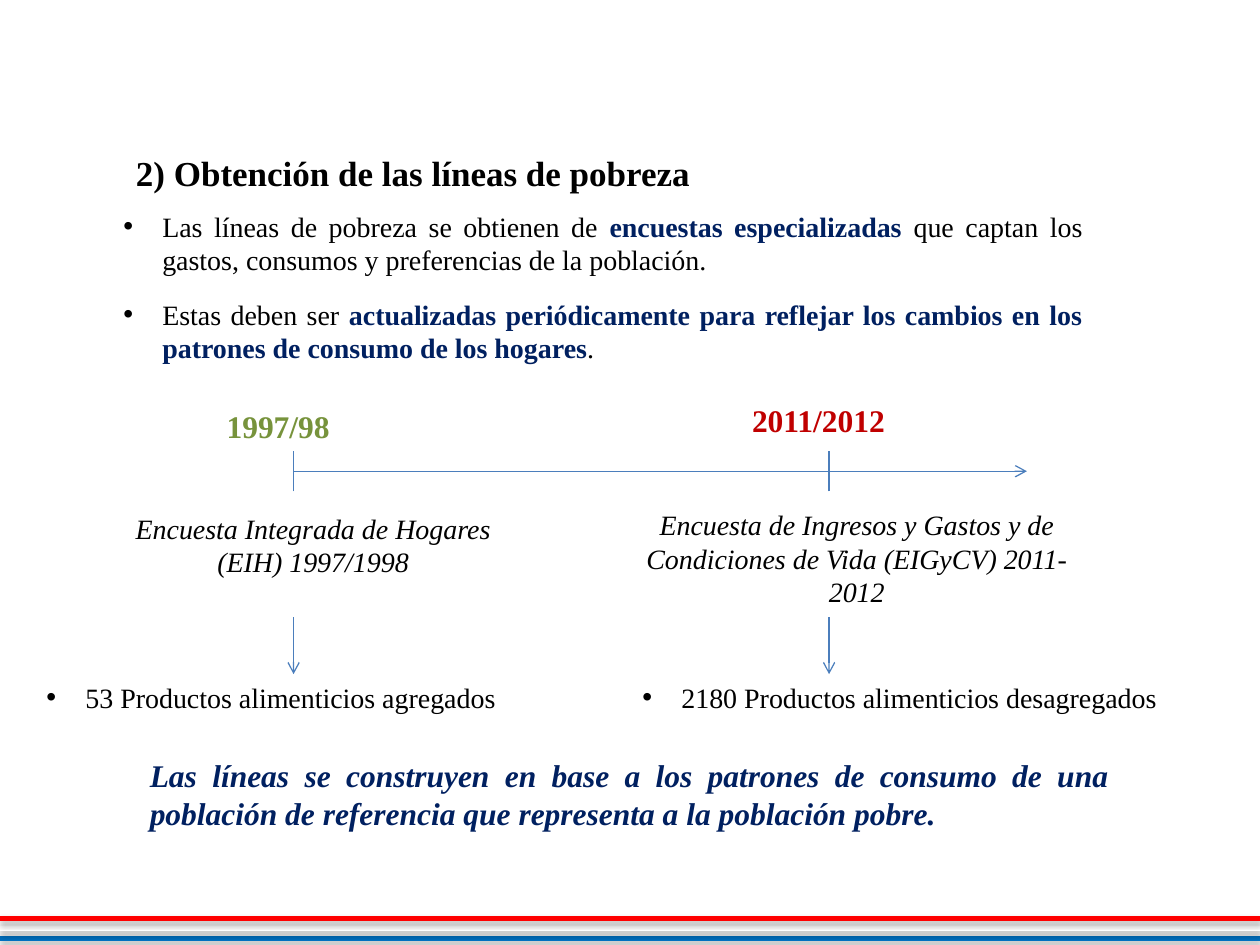
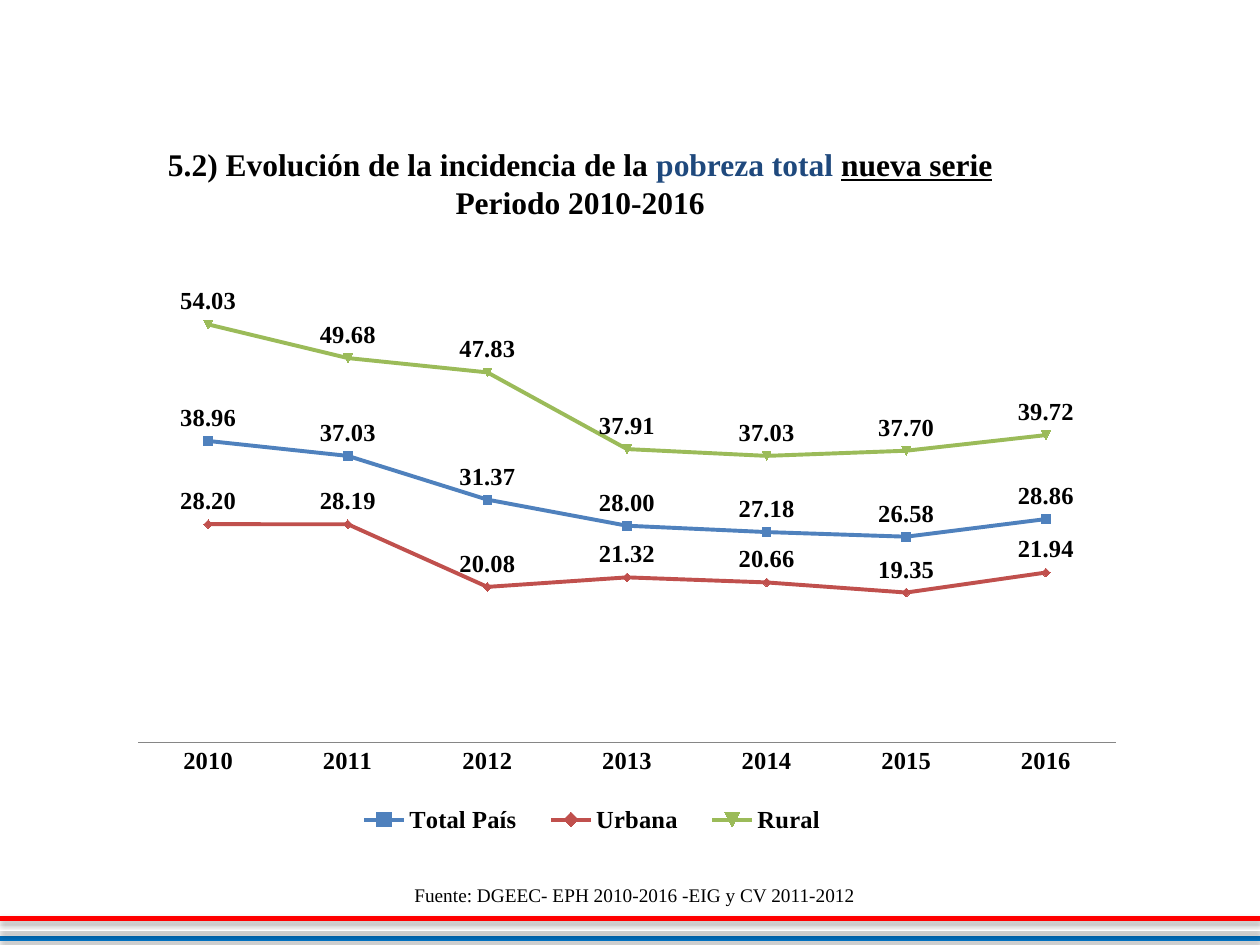
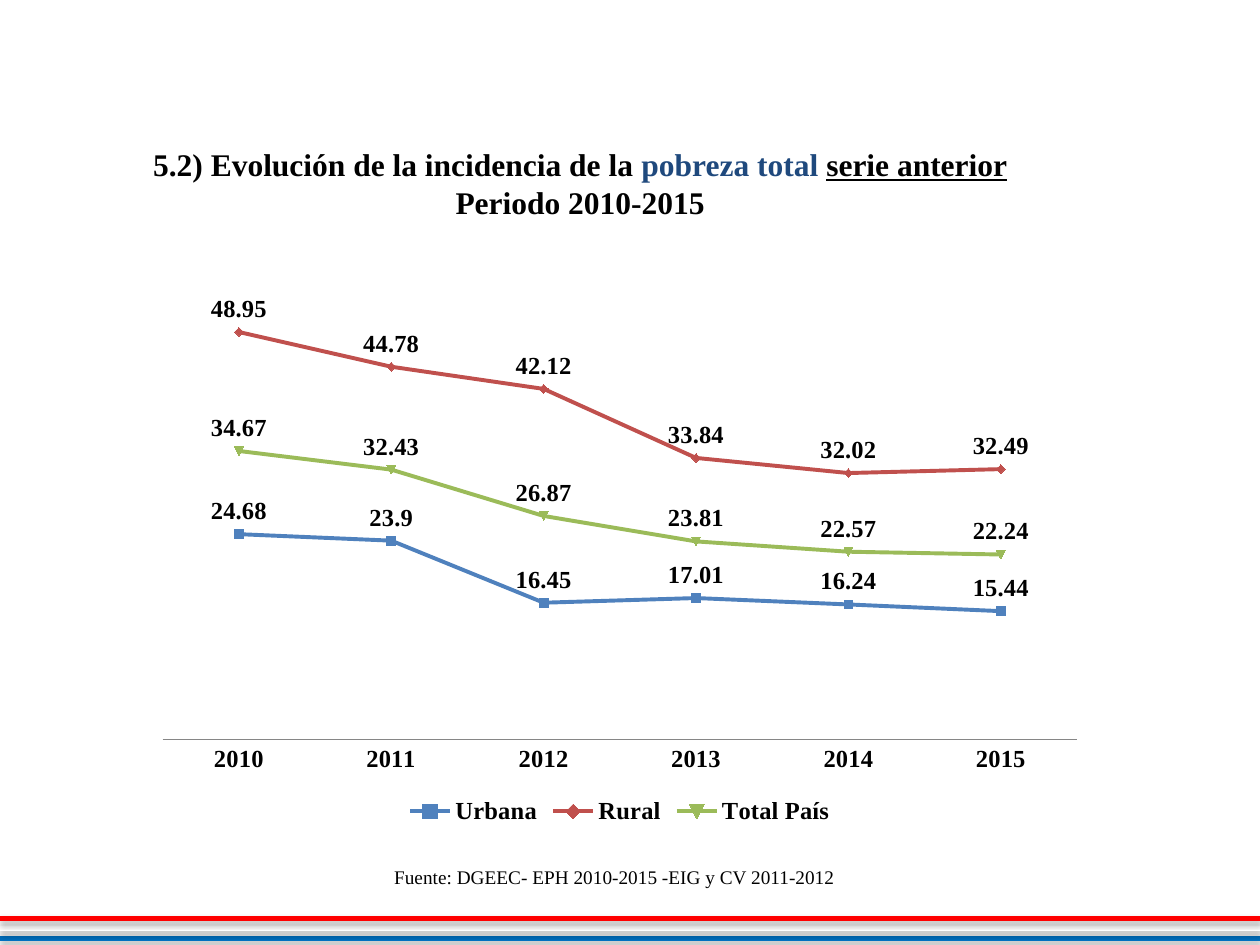
"""Build three slides on poverty lines and the incidence of total poverty."""
import pptx
import pptx.chart.data
import pptx.dml.color
import pptx.enum.chart
import pptx.enum.shapes
import pptx.enum.text
import pptx.oxml
import pptx.oxml.ns
import pptx.util
from lxml import etree

RGBColor = pptx.dml.color.RGBColor
Pt = pptx.util.Pt
ALIGN = pptx.enum.text.PP_ALIGN

BLACK = RGBColor(0x00, 0x00, 0x00)
WHITE = RGBColor(0xFF, 0xFF, 0xFF)
NAVY = RGBColor(0x00, 0x20, 0x60)
TITLE_BLUE = RGBColor(0x1F, 0x49, 0x7D)
FLAG_BLUE = RGBColor(0x00, 0x70, 0xC0)
FLAG_RED = RGBColor(0xFF, 0x00, 0x00)
DARK_RED = RGBColor(0xC0, 0x00, 0x00)
OLIVE = RGBColor(0x77, 0x93, 0x3C)
LINE_BLUE = RGBColor(0x4B, 0x7E, 0xBC)
AXIS_GREY = RGBColor(0x86, 0x86, 0x86)
SERIES_COLORS = [RGBColor(0x4F, 0x81, 0xBD), RGBColor(0xC0, 0x50, 0x4D), RGBColor(0x9B, 0xBB, 0x59)]

FONT = "Times New Roman"
COLUMNS, ROWS = 100, 75
WIDTH, HEIGHT = pptx.util.Inches(10), pptx.util.Inches(7.5)

BANDS = [(74.5, FLAG_BLUE), (73.7, WHITE), (72.9, FLAG_RED)]
STRONG = {"bold": True, "color": NAVY}

HEADING = "2) Obtención de las líneas de pobreza"
POINTS = [
    [("Las líneas de pobreza se obtienen de ", {}),
     ("encuestas especializadas", STRONG),
     (" que captan los gastos, consumos y preferencias de la población.", {})],
    [("Estas deben ser ", {}),
     ("actualizadas periódicamente para reflejar los cambios en los patrones de consumo de los hogares", STRONG),
     (".", {})],
]
CONCLUSION = ("Las líneas se construyen en base a los patrones de consumo de una población "
              "de referencia que representa a la población pobre.")
SURVEYS = [
    {"column": 23.3, "year": "1997/98", "year_box": (17, 31.8, 12.6, 4), "color": OLIVE,
     "survey": "Encuesta Integrada de Hogares (EIH) 1997/1998", "survey_box": (9.3, 40.1, 31.1, 6.4),
     "products": "53 Productos alimenticios agregados", "products_box": (2.7, 53.5, 44.3, 3.7)},
    {"column": 65.8, "year": "2011/2012", "year_box": (58.7, 31.3, 14.2, 4), "color": DARK_RED,
     "survey": "Encuesta de Ingresos y Gastos y de Condiciones de Vida (EIGyCV) 2011-2012",
     "survey_box": (50, 39.8, 36, 9.1),
     "products": "2180 Productos alimenticios desagregados", "products_box": (50, 53.5, 50, 3.7)},
]
TIMELINE_ROW, TIMELINE_ENDS = 37.4, (80, 81.5)
TICK_ROWS, ARROW_ROWS = (39, 35.8), (49, 53.5)

CHARTS = [
    {"series_title": "nueva serie", "period": "2010-2016", "years": range(2010, 2017),
     "source_box": (31.9, 69.6, 51, 2.9), "box": (9.4, 21.6, 79.2, 49.1),
     "plot": (0.02, 0.01, 0.98, 0.75), "legend": (0.22, 0.85, 0.51, 0.07), "format": "0.00",
     "series": {"Total País": (38.96, 37.03, 31.37, 28, 27.18, 26.58, 28.86),
                "Urbana": (28.2, 28.19, 20.08, 21.32, 20.66, 19.35, 21.94),
                "Rural": (54.03, 49.68, 47.83, 37.91, 37.03, 37.7, 39.72)}},
    {"series_title": "serie anterior", "period": "2010-2015", "years": range(2010, 2016),
     "source_box": (30.3, 68.2, 51, 2.9), "box": (11.4, 18.1, 75.6, 47.8),
     "plot": (0.02, 0.02, 0.96, 0.83), "legend": None, "format": "General",
     "series": {"Urbana": (24.68, 23.9, 16.45, 17.01, 16.24, 15.44),
                "Rural": (48.95, 44.78, 42.12, 33.84, 32.02, 32.49),
                "Total País": (34.67, 32.43, 26.87, 23.81, 22.57, 22.24)}},
]


def across(columns):
    return round(WIDTH * columns / COLUMNS)


def down(rows):
    return round(HEIGHT * rows / ROWS)


def place(box):
    left, top, width, height = box
    return across(left), down(top), across(width), down(height)


def style_font(font, size, color=BLACK, bold=False, italic=False):
    font.name, font.size, font.bold, font.italic = FONT, Pt(size), bold, italic
    font.color.rgb = color


def add_bullet(paragraph):
    properties = paragraph._p.get_or_add_pPr()
    indent = pptx.util.Inches(0.31)
    properties.set("marL", str(indent))
    properties.set("indent", str(-indent))
    for tag, name, value in (("buFont", "typeface", "Arial"), ("buChar", "char", "•")):
        etree.SubElement(properties, pptx.oxml.ns.qn("a:" + tag)).set(name, value)


def add_text(slide, box, paragraphs, size, align=ALIGN.LEFT, bullet=False, gap=0, **style):
    """Add a text box; each paragraph is a string or a list of (text, changes) runs."""
    frame = slide.shapes.add_textbox(*place(box)).text_frame
    frame.word_wrap = True
    for index, content in enumerate(paragraphs):
        paragraph = frame.add_paragraph() if index else frame.paragraphs[0]
        paragraph.alignment = align
        if index:
            paragraph.space_before = Pt(gap)
        if bullet:
            add_bullet(paragraph)
        style_font(paragraph.font, size, **style)
        for text, changes in [(content, {})] if isinstance(content, str) else content:
            run = paragraph.add_run()
            run.text = text
            style_font(run.font, size, **{**style, **{k: v for k, v in changes.items() if k != "underline"}})
            run.font.underline = changes.get("underline")


def add_line(slide, start, end, color=LINE_BLUE, width=0.75, arrow=False, shadow=False):
    connector = slide.shapes.add_connector(
        pptx.enum.shapes.MSO_CONNECTOR.STRAIGHT,
        across(start[0]), down(start[1]), across(end[0]), down(end[1]))
    connector.line.color.rgb = color
    connector.line.width = Pt(width)
    if arrow:
        line = connector.line._get_or_add_ln()
        etree.SubElement(line, pptx.oxml.ns.qn("a:tailEnd")).set("type", "arrow")
    effects = etree.SubElement(connector._element.spPr, pptx.oxml.ns.qn("a:effectLst"))
    if shadow:
        effects.append(pptx.oxml.parse_xml(
            f'<a:outerShdw {pptx.oxml.ns.nsdecls("a")} blurRad="{Pt(3.1)}" dist="{Pt(1.8)}" '
            'dir="5400000" rotWithShape="0"><a:srgbClr val="000000"><a:alpha val="35000"/>'
            '</a:srgbClr></a:outerShdw>'))


def add_slide(presentation):
    slide = presentation.slides.add_slide(presentation.slide_layouts[6])
    for row, color in BANDS:
        add_line(slide, (0, row), (COLUMNS, row), color, 3, shadow=True)
    return slide


def manual_layout(box, inner=False):
    target = '<c:layoutTarget val="inner"/>' if inner else ""
    modes = '<c:xMode val="edge"/><c:yMode val="edge"/>'
    sizes = "".join(f'<c:{name} val="{value}"/>' for name, value in zip("xywh", box))
    return pptx.oxml.parse_xml(
        f'<c:layout {pptx.oxml.ns.nsdecls("c")}><c:manualLayout>{target}{modes}{sizes}'
        '</c:manualLayout></c:layout>')


def set_layout(parent, layout, position):
    for old in parent.findall(pptx.oxml.ns.qn("c:layout")):
        parent.remove(old)
    parent.insert(position, layout)


def add_line_chart(slide, content):
    data = pptx.chart.data.CategoryChartData(number_format=content["format"])
    data.categories = [str(year) for year in content["years"]]
    for name, values in content["series"].items():
        data.add_series(name, values)
    chart = slide.shapes.add_chart(
        pptx.enum.chart.XL_CHART_TYPE.LINE_MARKERS, *place(content["box"]), data).chart
    chart.has_title = False
    chart.font.name, chart.font.size = "Calibri", Pt(10)
    chart.font.color.rgb = BLACK

    chart.has_legend = True
    chart.legend.position = pptx.enum.chart.XL_LEGEND_POSITION.BOTTOM
    chart.legend.include_in_layout = False
    style_font(chart.legend.font, 14, bold=True)
    if content["legend"]:
        set_layout(chart.legend._element, manual_layout(content["legend"]), 1)
    set_layout(chart._chartSpace.chart.plotArea, manual_layout(content["plot"], inner=True), 0)

    years, values = chart.category_axis, chart.value_axis
    years.major_tick_mark = pptx.enum.chart.XL_TICK_MARK.NONE
    years.format.line.color.rgb = AXIS_GREY
    style_font(years.tick_labels.font, 14, bold=True)
    values.minimum_scale, values.maximum_scale = 0, 60
    values.has_major_gridlines = False
    values.visible = False

    plot = chart.plots[0]
    plot.vary_by_categories = False
    for series, color in zip(plot.series, SERIES_COLORS):
        series.smooth = False
        series.format.line.color.rgb = color
        series.format.line.width = Pt(2.25)
        labels = series.data_labels
        labels.show_value = True
        labels.position = pptx.enum.chart.XL_LABEL_POSITION.ABOVE
        labels.number_format, labels.number_format_is_linked = content["format"], False
        style_font(labels.font, 14, bold=True)


def build_survey_slide(presentation):
    slide = add_slide(presentation)
    add_text(slide, (9.8, 11.5, 87.4, 4.4), [HEADING], 20, bold=True)
    add_text(slide, (8.8, 16.1, 78.1, 16.5), POINTS, 16, ALIGN.JUSTIFY, bullet=True, gap=12)
    for survey, end in zip(SURVEYS, TIMELINE_ENDS):
        column = survey["column"]
        last = survey is SURVEYS[-1]
        add_line(slide, (column, TIMELINE_ROW), (end, TIMELINE_ROW), arrow=last)
        add_line(slide, (column, TICK_ROWS[0]), (column, TICK_ROWS[1]))
        add_line(slide, (column, ARROW_ROWS[0]), (column, ARROW_ROWS[1]), arrow=True)
        add_text(slide, survey["year_box"], [survey["year"]], 18, color=survey["color"], bold=True)
        add_text(slide, survey["survey_box"], [survey["survey"]], 16, ALIGN.CENTER, italic=True)
        add_text(slide, survey["products_box"], [survey["products"]], 16, ALIGN.JUSTIFY, bullet=True)
    add_text(slide, (10.9, 59.5, 78.1, 7.1), [CONCLUSION], 18, ALIGN.JUSTIFY,
             color=NAVY, bold=True, italic=True)


def build_chart_slide(presentation, content):
    slide = add_slide(presentation)
    title = [("5.2) Evolución de la incidencia de la ", {}),
             ("pobreza total ", {"color": TITLE_BLUE}),
             (content["series_title"], {"underline": True})]
    add_text(slide, (5.9, 11, 80.3, 7.1), [title, f"Periodo {content['period']}"], 18,
             ALIGN.CENTER, bold=True)
    add_text(slide, content["source_box"],
             [f"Fuente: DGEEC- EPH {content['period']} -EIG y CV 2011-2012"], 11)
    add_line_chart(slide, content)


def main():
    presentation = pptx.Presentation()
    presentation.slide_width, presentation.slide_height = WIDTH, HEIGHT
    build_survey_slide(presentation)
    for content in CHARTS:
        build_chart_slide(presentation, content)
    presentation.save("out.pptx")


if __name__ == "__main__":
    main()
